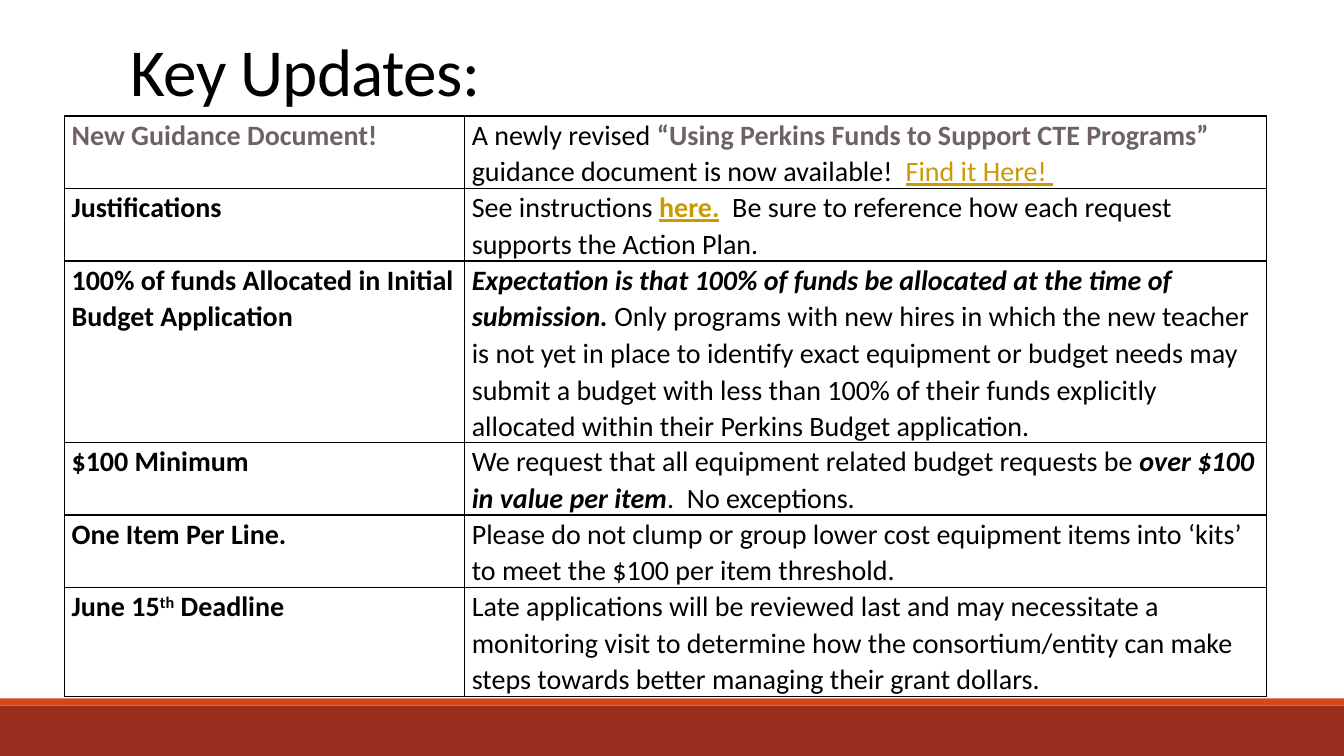
from lxml.etree import SubElement
from pptx import Presentation
from pptx.dml.color import RGBColor as RGB
from pptx.enum.shapes import MSO_SHAPE as SHAPE
from pptx.enum.text import MSO_ANCHOR as ANCHOR
from pptx.oxml.ns import qn
from pptx.util import Inches, Pt

COLORS = {"text": "000000", "accent": "6E6263", "link": "CC9900",
          "paper": "FFFFFF", "footer": "9B2D1F", "stripe": "D34817"}
LINE_HEIGHT = 0.36
COLUMN_WIDTHS = (3.97, 7.95)

# Each row: number of text lines, topic runs, detail runs.
# Run marks: b bold, i italic, u underlined link, a accent colour, ^ superscript.
UPDATES = [
    (2, [("New Guidance Document!", "ba")],
     [("A newly revised ", ""),
      ("“Using Perkins Funds to Support CTE Programs” ", "ba"),
      ("guidance document is now available!  ", ""),
      ("Find it Here! ", "u")]),
    (2, [("Justifications", "b")],
     [("See instructions ", ""), ("here.", "bu"),
      ("  Be sure to reference how each request supports the Action Plan.", "")]),
    (5, [("100% of funds Allocated in Initial Budget Application", "b")],
     [("Expectation is that 100% of funds be allocated at the time of submission.", "bi"),
      (" Only programs with new hires in which the new teacher is not yet in place "
       "to identify exact equipment or budget needs may submit a budget with less "
       "than 100% of their funds explicitly allocated within their Perkins Budget "
       "application.", "")]),
    (2, [("$100 Minimum", "b")],
     [("We request that all equipment related budget requests be ", ""),
      ("over $100 in value per item", "bi"), (".  No exceptions.", "")]),
    (2, [("One Item Per Line.", "b")],
     [("Please do not clump or group lower cost equipment items into ‘kits’ "
       "to meet the $100 per item threshold.", "")]),
    (3, [("June 15", "b"), ("th", "b^"), (" Deadline", "b")],
     [("Late applications will be reviewed last and may necessitate a monitoring "
       "visit to determine how the consortium/entity can make steps towards better "
       "managing their grant dollars.", "")]),
]


def style_run(run, size, color):
    run.font.name = "Calibri"
    run.font.size = Pt(size)
    run.font.color.rgb = RGB.from_string(COLORS[color])


def fill_cell(cell, runs):
    """Write the marked runs into a white cell with thin black borders."""
    cell.margin_left = cell.margin_right = Inches(0.07)
    cell.margin_top = cell.margin_bottom = 0
    paragraph = cell.text_frame.paragraphs[0]
    paragraph.line_spacing = 1.07
    for words, marks in runs:
        run = paragraph.add_run()
        run.text = words
        style_run(run, 20, "link" if "u" in marks else "accent" if "a" in marks else "text")
        run.font.bold = "b" in marks
        run.font.italic = "i" in marks
        run.font.underline = "u" in marks
        if "^" in marks:
            run.font._element.set("baseline", "30000")
    properties = cell._tc.get_or_add_tcPr()
    for side in ("a:lnL", "a:lnR", "a:lnT", "a:lnB"):
        border = SubElement(properties, qn(side), w=str(Pt(1)))
        ink = SubElement(border, qn("a:solidFill"))
        SubElement(ink, qn("a:srgbClr"), val=COLORS["text"])
    cell.fill.solid()
    cell.fill.fore_color.rgb = RGB.from_string(COLORS["paper"])


deck = Presentation()
deck.slide_width, deck.slide_height = Inches(13.33), Inches(7.5)
slide = deck.slides.add_slide(deck.slide_layouts[6])

for color, top, height in (("footer", 7, 0.5), ("stripe", 6.93, 0.07)):
    band = slide.shapes.add_shape(SHAPE.RECTANGLE, 0, Inches(top),
                                  deck.slide_width, Inches(height))
    band.shadow.inherit = False
    band.fill.solid()
    band.fill.fore_color.rgb = RGB.from_string(COLORS[color])
    band.line.fill.background()

heading = slide.shapes.add_textbox(Inches(1.2), Inches(0.31), Inches(11), Inches(0.83))
heading.text_frame.word_wrap = True
heading.text_frame.vertical_anchor = ANCHOR.BOTTOM
heading.text_frame.text = "Key Updates:"
title = heading.text_frame.paragraphs[0]
title.line_spacing = 0.85
style_run(title.runs[0], 48, "text")
title.runs[0].font._element.set("spc", "-50")

table_height = LINE_HEIGHT * sum(lines for lines, *_ in UPDATES)
table = slide.shapes.add_table(len(UPDATES), len(COLUMN_WIDTHS), Inches(0.64), Inches(1.15),
                               Inches(sum(COLUMN_WIDTHS)), Inches(table_height)).table
table.first_row = table.horz_banding = False
for column, width in zip(table.columns, COLUMN_WIDTHS):
    column.width = Inches(width)
for row, (lines, *contents) in zip(table.rows, UPDATES):
    row.height = Inches(lines * LINE_HEIGHT)
    for cell, runs in zip(row.cells, contents):
        fill_cell(cell, runs)

deck.save("out.pptx")
